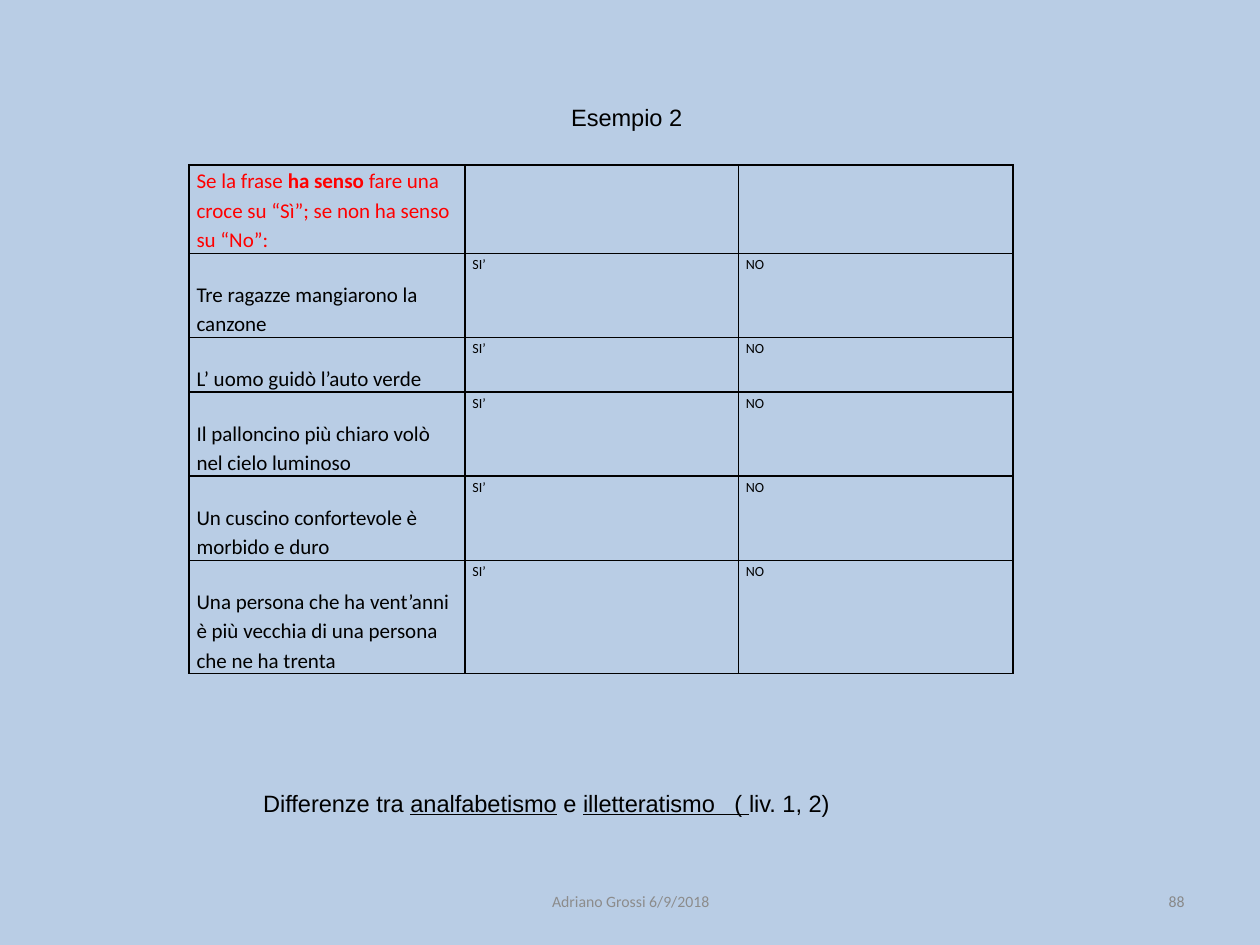
from dataclasses import dataclass
from typing import NamedTuple

from lxml import etree
from pptx import Presentation
from pptx.dml.color import RGBColor
from pptx.enum.text import MSO_ANCHOR, PP_ALIGN
from pptx.oxml.ns import qn
from pptx.util import Inches, Pt

LEFT, CENTER, RIGHT = PP_ALIGN.LEFT, PP_ALIGN.CENTER, PP_ALIGN.RIGHT
TOP, MIDDLE = MSO_ANCHOR.TOP, MSO_ANCHOR.MIDDLE
TITLE_ONLY = 5


@dataclass(frozen=True)
class Theme:
    background: str = "B9CDE5"
    ink: str = "000000"
    instruction: str = "FF0000"
    footer: str = "8C8C8C"
    number: str = "898989"
    heading_font: str = "Arial"
    body_font: str = "Calibri"
    heading_size: float = 13.5
    body_size: float = 12
    answer_size: float = 8
    footer_size: float = 9
    border: float = 1
    line_spacing: float = 1.15


class Run(NamedTuple):
    text: str
    bold: bool = False
    underline: bool = False


class Style(NamedTuple):
    font: str
    size: float
    color: str


class Box(NamedTuple):
    left: float
    top: float
    width: float
    height: float

    def emu(self):
        return [Inches(v) for v in self]


class Question(NamedTuple):
    text: str
    height: float


THEME = Theme()
HEADING = Style(THEME.heading_font, THEME.heading_size, THEME.ink)
INSTRUCTION = Style(THEME.body_font, THEME.body_size, THEME.instruction)
BODY = Style(THEME.body_font, THEME.body_size, THEME.ink)
ANSWER = Style(THEME.body_font, THEME.answer_size, THEME.ink)
FOOTER = Style(THEME.body_font, THEME.footer_size, THEME.footer)
NUMBER = Style(THEME.body_font, THEME.footer_size, THEME.number)

TABLE_BOX = Box(1.5, 1.31, 6.54, 4.14)
COLUMNS = (2.19, 2.17, 2.18)
HEADER_HEIGHT = 0.5
CELL_INSET = 0.06
QUESTION_INSET = 0.2
ANSWERS = ("SI’", "NO")
HEADER = (
    Run("Se la frase "),
    Run("ha senso ", bold=True),
    Run("fare una croce su “Sì”; se non ha senso su “No”:"),
)
QUESTIONS = (
    Question("Tre ragazze mangiarono la canzone", 0.5),
    Question("L’ uomo guidò l’auto verde", 0.33),
    Question("Il palloncino più chiaro volò nel cielo luminoso", 0.5),
    Question("Un cuscino confortevole è morbido e duro", 0.5),
    Question("Una persona che ha vent’anni è più vecchia di una persona "
             "che ne ha trenta", 0.67),
)
NOTE = (
    Run("Differenze tra "),
    Run("analfabetismo", underline=True),
    Run(" e "),
    Run("illetteratismo   ( ", underline=True),
    Run("liv. 1, 2)"),
)


def add_runs(p, runs: tuple[Run, ...], style: Style) -> None:
    for run in runs:
        r = p.add_run()
        r.text = run.text
        r.font.name = style.font
        r.font.size = Pt(style.size)
        r.font.color.rgb = RGBColor.from_string(style.color)
        r.font.bold = run.bold
        r.font.underline = run.underline


def add_text(s, box: Box, runs: tuple[Run, ...], style: Style,
             align=LEFT, anchor=TOP) -> None:
    tf = s.shapes.add_textbox(*box.emu()).text_frame
    tf.word_wrap = True
    tf.vertical_anchor = anchor
    p = tf.paragraphs[0]
    p.alignment = align
    add_runs(p, runs, style)


def format_cell(cell) -> None:
    """Draw a thin border on every side and leave the cell unfilled."""
    tc_pr = cell._tc.get_or_add_tcPr()
    for side in ("a:lnL", "a:lnR", "a:lnT", "a:lnB"):
        ln = etree.SubElement(tc_pr, qn(side), w=str(Pt(THEME.border)))
        fill = etree.SubElement(ln, qn("a:solidFill"))
        etree.SubElement(fill, qn("a:srgbClr"), val=THEME.ink)
    cell.fill.background()
    cell.margin_left = cell.margin_right = Inches(CELL_INSET)
    cell.margin_top = cell.margin_bottom = 0


def write_cell(cell, runs: tuple[Run, ...], style: Style,
               inset: float = 0) -> None:
    cell.margin_top = Inches(inset)
    p = cell.text_frame.paragraphs[0]
    p.line_spacing = THEME.line_spacing
    add_runs(p, runs, style)


def add_question_table(s) -> None:
    frame = s.shapes.add_table(len(QUESTIONS) + 1, len(COLUMNS),
                               *TABLE_BOX.emu())
    table = frame.table
    table.first_row = table.horz_banding = False
    for column, width in zip(table.columns, COLUMNS):
        column.width = Inches(width)
    heights = (HEADER_HEIGHT, *(q.height for q in QUESTIONS))
    for row, height in zip(table.rows, heights):
        row.height = Inches(height)
    frame.height = Inches(TABLE_BOX.height)
    for cell in table.iter_cells():
        format_cell(cell)

    write_cell(table.cell(0, 0), HEADER, INSTRUCTION)
    for i, question in enumerate(QUESTIONS, start=1):
        write_cell(table.cell(i, 0), (Run(question.text),), BODY,
                   QUESTION_INSET)
        for j, answer in enumerate(ANSWERS, start=1):
            write_cell(table.cell(i, j), (Run(answer),), ANSWER)


def main() -> None:
    prs = Presentation()
    prs.slide_width, prs.slide_height = Inches(10), Inches(7.5)
    s = prs.slides.add_slide(prs.slide_layouts[TITLE_ONLY])
    s.background.fill.solid()
    s.background.fill.fore_color.rgb = RGBColor.from_string(THEME.background)

    # Title
    title = s.shapes.title
    title.left, title.top, title.width, title.height = Box(
        0.5, 0.3, 9, 1.25).emu()
    tf = title.text_frame
    tf.vertical_anchor = MIDDLE
    p = tf.paragraphs[0]
    p.alignment = CENTER
    add_runs(p, (Run("Esempio 2 "),), HEADING)

    # Questions and closing note
    add_question_table(s)
    add_text(s, Box(1.99, 6.21, 5.55, 0.33), NOTE, HEADING)

    # Footer
    add_text(s, Box(3.42, 6.95, 3.17, 0.4),
             (Run("Adriano Grossi 6/9/2018"),), FOOTER, CENTER, MIDDLE)
    add_text(s, Box(7.17, 6.95, 2.33, 0.4), (Run("88"),), NUMBER,
             RIGHT, MIDDLE)

    prs.save("out.pptx")


if __name__ == "__main__":
    main()
